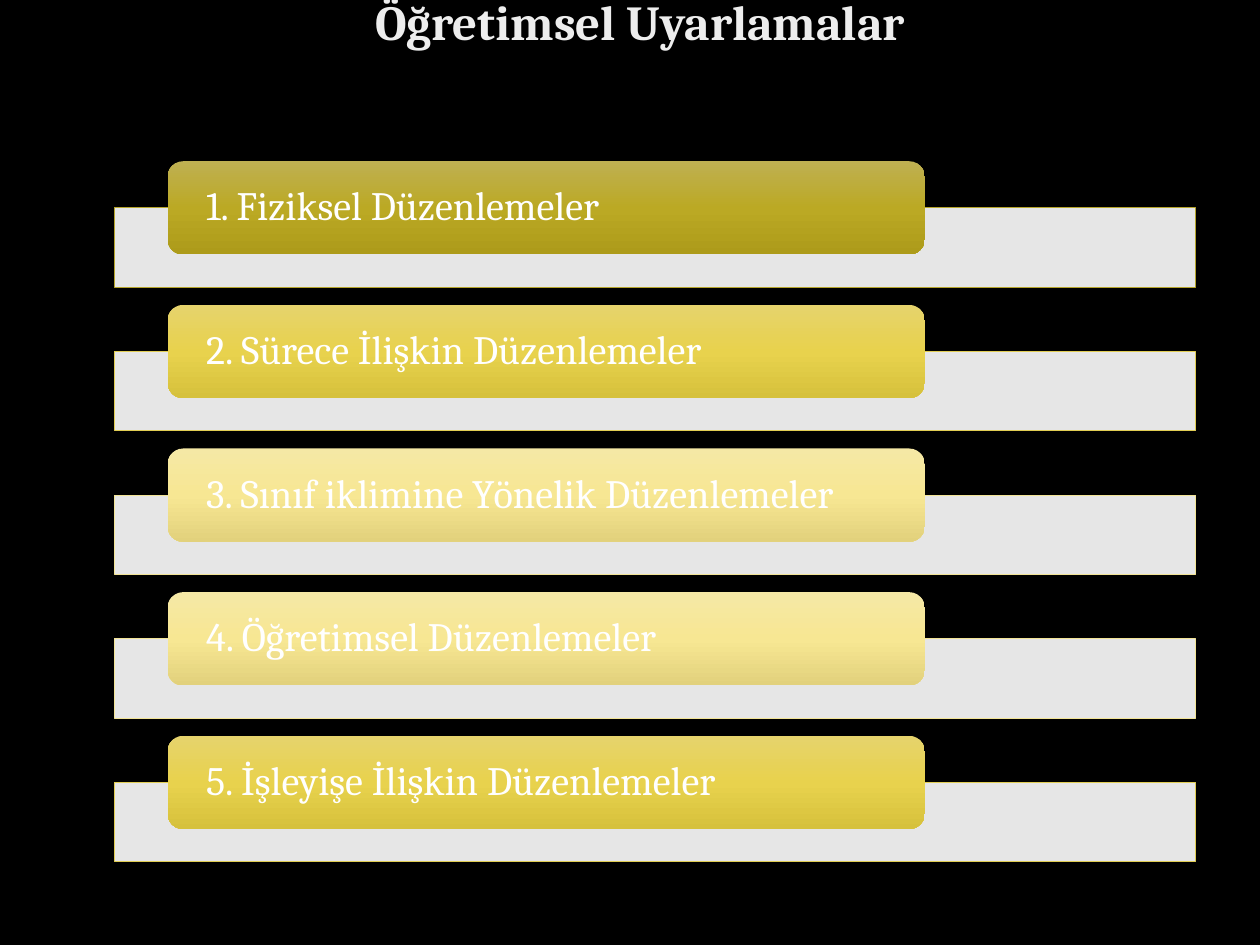
from copy import deepcopy
from dataclasses import dataclass

from pptx import Presentation
from pptx.dml.color import RGBColor
from pptx.enum.shapes import MSO_SHAPE as Preset
from pptx.enum.text import MSO_ANCHOR as Anchor, PP_ALIGN as Align
from pptx.oxml.ns import qn
from pptx.oxml.xmlchemy import OxmlElement
from pptx.shapes.autoshape import Shape
from pptx.slide import Slide
from pptx.util import Inches, Pt

FONT = "Cambria"
BLACK = RGBColor(0x00, 0x00, 0x00)
WHITE = RGBColor(0xFF, 0xFF, 0xFF)
TITLE_GRAY = RGBColor(0xED, 0xED, 0xED)

FIRST_TOP = 1.28
PITCH = 1.14
BAND_DROP = 0.37


@dataclass(frozen=True)
class Tone:
    border: RGBColor
    stops: tuple[RGBColor, RGBColor, RGBColor]


OLIVE = Tone(RGBColor(0xB5, 0xA4, 0x2B),
             (RGBColor(0xBF, 0xB0, 0x52), RGBColor(0xBB, 0xA9, 0x24), RGBColor(0xAD, 0x9B, 0x1A)))
GOLD = Tone(RGBColor(0xE1, 0xCD, 0x54),
            (RGBColor(0xE6, 0xD3, 0x6C), RGBColor(0xE8, 0xD2, 0x4D), RGBColor(0xD6, 0xC1, 0x3C)))
CREAM = Tone(RGBColor(0xF2, 0xE4, 0x97),
             (RGBColor(0xF5, 0xE8, 0xA5), RGBColor(0xF7, 0xE7, 0x93), RGBColor(0xE2, 0xD1, 0x7C)))


@dataclass(frozen=True)
class Adaptation:
    label: str
    tone: Tone


ADAPTATIONS = (
    Adaptation("1. Fiziksel Düzenlemeler", OLIVE),
    Adaptation("2. Sürece İlişkin Düzenlemeler", GOLD),
    Adaptation("3. Sınıf iklimine Yönelik Düzenlemeler", CREAM),
    Adaptation("4. Öğretimsel Düzenlemeler", CREAM),
    Adaptation("5. İşleyişe İlişkin Düzenlemeler", GOLD),
)


def write(shape: Shape, text: str, size: float, color: RGBColor,
          align: Align, inset: float, bold: bool = False) -> None:
    frame = shape.text_frame
    frame.word_wrap = True
    frame.vertical_anchor = Anchor.MIDDLE
    frame.margin_left = frame.margin_right = Inches(inset)
    frame.margin_top = frame.margin_bottom = Inches(0)
    paragraph = frame.paragraphs[0]
    paragraph.text = text
    paragraph.alignment = align
    paragraph.line_spacing = 0.9
    font = paragraph.font
    font.name, font.size, font.bold = FONT, Pt(size), bold
    font.color.rgb = color


def fill_downward(shape: Shape, colors: tuple[RGBColor, ...]) -> None:
    """Fill with evenly spaced gradient stops running from top to bottom."""
    fill = shape.fill
    fill.gradient()
    fill.gradient_angle = 270
    stop_list = shape._element.spPr.find(qn("a:gradFill")).find(qn("a:gsLst"))
    while len(stop_list) < len(colors):
        stop_list.append(deepcopy(stop_list[0]))
    for index, (stop, color) in enumerate(zip(fill.gradient_stops, colors)):
        stop.position = index / (len(colors) - 1)
        stop.color.rgb = color


def add_band(slide: Slide, top: float, border: RGBColor) -> None:
    band = slide.shapes.add_shape(
        Preset.RECTANGLE, Inches(0.91), Inches(top), Inches(8.58), Inches(0.63))
    band.shadow.inherit = False
    band.fill.solid()
    band.fill.fore_color.rgb = WHITE
    alpha = OxmlElement("a:alpha")
    alpha.set("val", "90000")
    band._element.spPr.find(qn("a:solidFill"))[0].append(alpha)
    band.line.color.rgb = border
    band.line.width = Pt(0.5)


def add_adaptation(slide: Slide, top: float, adaptation: Adaptation) -> None:
    add_band(slide, top + BAND_DROP, adaptation.tone.border)
    tab = slide.shapes.add_shape(
        Preset.ROUNDED_RECTANGLE, Inches(1.33), Inches(top), Inches(6.01), Inches(0.74))
    tab.shadow.inherit = False
    tab.line.fill.background()
    fill_downward(tab, adaptation.tone.stops)
    write(tab, adaptation.label, 23, WHITE, Align.LEFT, inset=0.27)


def main() -> None:
    presentation = Presentation()
    presentation.slide_width = Inches(10)
    presentation.slide_height = Inches(7.5)
    slide = presentation.slides.add_slide(presentation.slide_layouts[6])
    slide.background.fill.solid()
    slide.background.fill.fore_color.rgb = BLACK

    title = slide.shapes.add_textbox(Inches(0.59), Inches(0), Inches(8.98), Inches(0.4))
    write(title, "Öğretimsel Uyarlamalar", 27.9, TITLE_GRAY, Align.CENTER, inset=0.1, bold=True)

    for index, adaptation in enumerate(ADAPTATIONS):
        add_adaptation(slide, FIRST_TOP + index * PITCH, adaptation)

    presentation.save("out.pptx")


if __name__ == "__main__":
    main()
